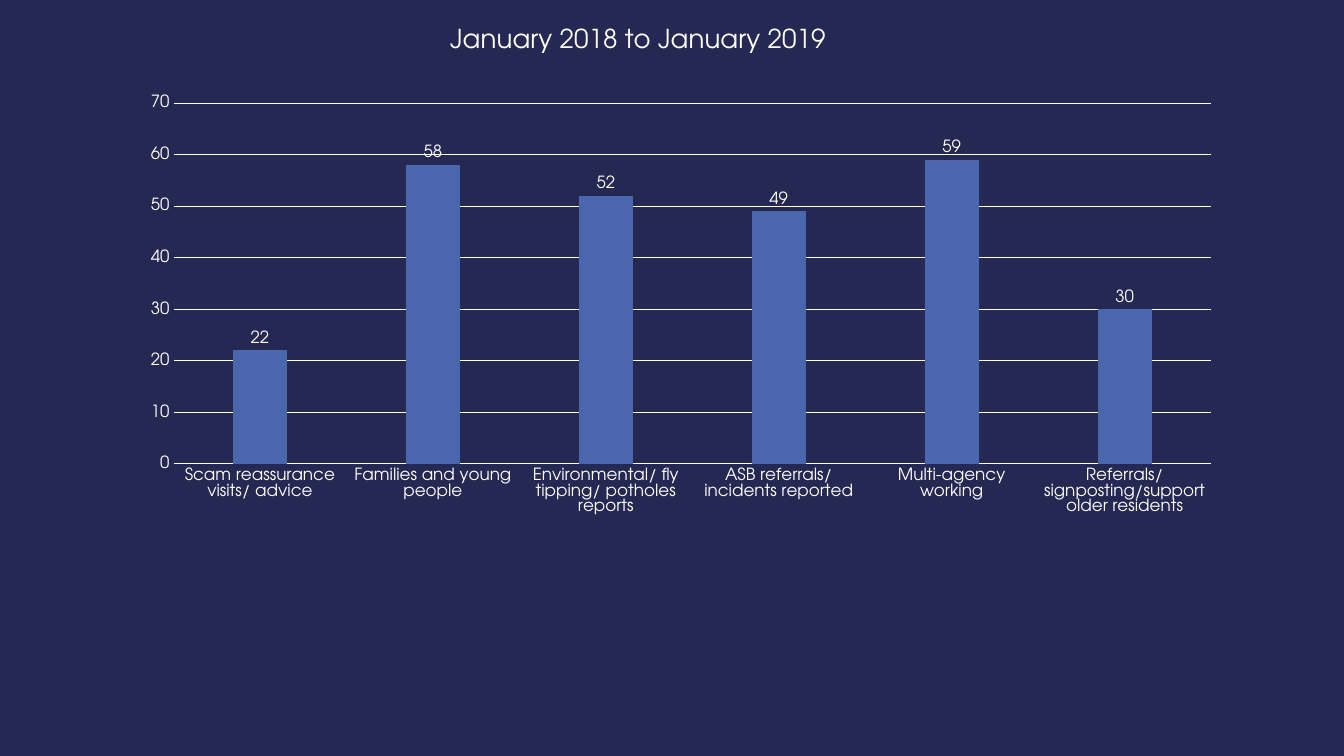
from lxml.etree import SubElement
from pptx import Presentation
from pptx.chart.data import CategoryChartData
from pptx.dml.color import RGBColor
from pptx.enum.chart import XL_CHART_TYPE, XL_LABEL_POSITION, XL_TICK_MARK
from pptx.oxml import parse_xml
from pptx.oxml.ns import nsdecls, qn
from pptx.util import Cm, Pt

NAVY = RGBColor(0x24, 0x28, 0x52)
BLUE = RGBColor(0x4A, 0x66, 0xAC)
WHITE = RGBColor(0xFF, 0xFF, 0xFF)
FONT = "TeX Gyre Adventor"

ACTIVITIES = {
    "Scam reassurance visits/ advice": 22,
    "Families and young people": 58,
    "Environmental/ fly tipping/ potholes reports": 52,
    "ASB referrals/ incidents reported": 49,
    "Multi-agency working": 59,
    "Referrals/signposting/support older residents": 30,
}


def style_font(font, size, color=WHITE, bold=False):
    font.name = FONT
    font.size = Pt(size)
    font.bold = bold
    font.color.rgb = color


def write_text(frame, text, **style):
    span = frame.paragraphs[0].add_run()
    span.text = text
    style_font(span.font, **style)


def set_layout(parent, index, **settings):
    layout = parent.find(qn("c:layout"))
    if layout is not None:
        parent.remove(layout)
    layout = parse_xml(f"<c:layout {nsdecls('c')}/>")
    parent.insert(index, layout)
    manual = SubElement(layout, qn("c:manualLayout"))
    for name, value in settings.items():
        SubElement(manual, qn(f"c:{name}")).set("val", str(value))


def style_line(line):
    line.color.rgb = WHITE
    line.width = Pt(0.75)


def style_axes(chart):
    for axis in (chart.category_axis, chart.value_axis):
        axis.major_tick_mark = XL_TICK_MARK.NONE
        axis.minor_tick_mark = XL_TICK_MARK.NONE
        style_font(axis.tick_labels.font, size=12)
    style_line(chart.category_axis.format.line)
    values = chart.value_axis
    values.minimum_scale, values.maximum_scale, values.major_unit = 0, 70, 10
    values.format.line.fill.background()
    values.has_major_gridlines = True
    style_line(values.major_gridlines.format.line)


def style_columns(chart):
    plot = chart.plots[0]
    plot.gap_width = 219
    plot.overlap = -27
    plot.vary_by_categories = False
    series = plot.series[0]
    series.format.fill.solid()
    series.format.fill.fore_color.rgb = BLUE
    labels = series.data_labels
    labels.show_value = True
    labels.position = XL_LABEL_POSITION.OUTSIDE_END
    style_font(labels.font, size=12)


def add_activity_chart(page, left, top, width, height):
    data = CategoryChartData()
    data.categories = list(ACTIVITIES)
    data.add_series("Series 1", list(ACTIVITIES.values()))
    chart = page.shapes.add_chart(
        XL_CHART_TYPE.COLUMN_CLUSTERED, left, top, width, height, data
    ).chart
    chart.has_legend = False
    style_font(chart.font, size=10)
    chart.has_title = True
    title = chart.chart_title
    write_text(title.text_frame, "January 2018 to January 2019", size=18.6)
    set_layout(title._element, 1, xMode="edge", yMode="edge", x=0.32, y=0.04)
    set_layout(
        chart._chartSpace.chart.plotArea, 0,
        layoutTarget="inner", xMode="edge", yMode="edge",
        x=0.091, y=0.142, w=0.874, h=0.453,
    )
    style_axes(chart)
    style_columns(chart)


def main():
    deck = Presentation()
    deck.slide_width, deck.slide_height = Cm(33.87), Cm(19.05)
    page = deck.slides.add_slide(deck.slide_layouts[6])
    page.background.fill.solid()
    page.background.fill.fore_color.rgb = NAVY
    add_activity_chart(page, Cm(1.65), Cm(-0.25), Cm(29.92), Cm(20.07))
    deck.save("out.pptx")


if __name__ == "__main__":
    main()
